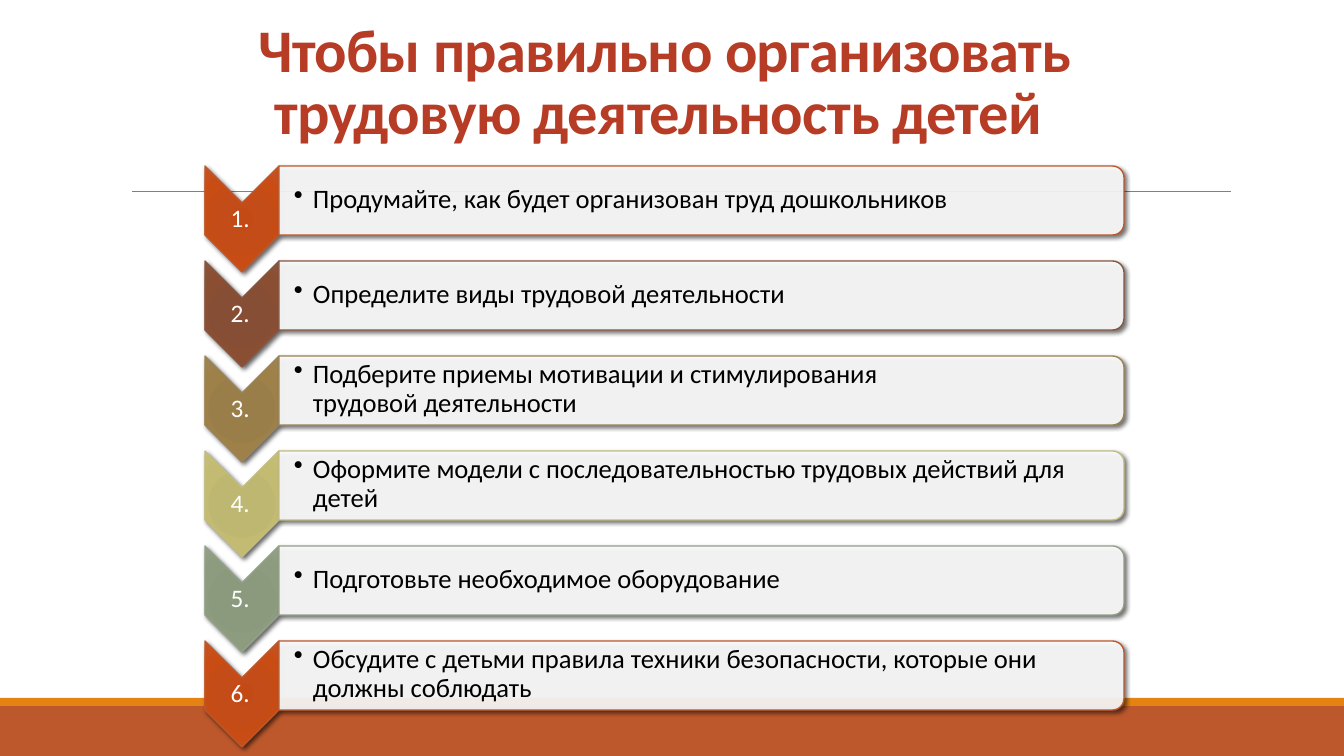
"""Build a slide with six numbered steps for organising children's work activity."""
from pptx import Presentation
from pptx import util as u
from pptx.dml.color import RGBColor
from pptx.enum import shapes, text
from pptx.oxml import parse_xml
from pptx.oxml.ns import nsdecls, qn

PX = 914400 / 100.8
THEME = {
    "font": "Calibri",
    "title": "B73C26",
    "title_size": 43.2,
    "number_size": 18,
    "step_size": 19,
    "band": "BD582C",
    "stripe": "E48312",
    "rule": "808080",
    "white": "FFFFFF",
    "black": "000000",
    "accents": [
        ("BD582C", ["C44A15", "C34C18", "C94C15", "C45525"]),
        ("865640", ["874C32", "864E34", "8A4E33", "8A553D"]),
        ("9B8357", ["9A7D48", "9A7E4A", "9E8049", "9E8454"]),
        ("C2BC80", ["BEB76E", "BEB771", "C3BB71", "C5BF7D"]),
        ("94A088", ["8A987B", "8B997D", "8D9C7E", "94A187"]),
    ],
}
STOPS = [0, 34, 70, 100]
STEP_PITCH = 95
STEPS = [
    ["Продумайте, как будет организован труд дошкольников"],
    ["Определите виды трудовой деятельности"],
    ["Подберите приемы мотивации и стимулирования", "трудовой деятельности"],
    ["Оформите модели с последовательностью трудовых действий для детей"],
    ["Подготовьте необходимое оборудование"],
    ["Обсудите с детьми правила техники безопасности, которые они должны соблюдать"],
]


def add_block(kind, left, top, width, height, fill, line=None, blur=0):
    shape = page.shapes.add_shape(kind, *[round(n * PX) for n in (left, top, width, height)])
    shape.shadow.inherit = False
    shape.fill.solid()
    shape.fill.fore_color.rgb = RGBColor.from_string(fill)
    if line is None:
        shape.line.fill.background()
        return shape
    shape.rotation = 90
    shape.line.color.rgb = RGBColor.from_string(line)
    shape.line.width = u.Pt(1)
    effects = shape._element.spPr.find(qn("a:effectLst"))
    effects.append(parse_xml(
        f'<a:outerShdw {nsdecls("a")} blurRad="{u.Pt(blur)}" dist="{u.Pt(2)}" dir="2700000" '
        f'algn="br" rotWithShape="0"><a:srgbClr val="{THEME["black"]}">'
        '<a:alpha val="60000"/></a:srgbClr></a:outerShdw>'))
    return shape


def add_label(left, top, width, height, inset, lines, size, color):
    box = page.shapes.add_textbox(*[round(n * PX) for n in (left, top, width, height)])
    frame = box.text_frame
    frame.word_wrap = True
    frame.vertical_anchor = text.MSO_ANCHOR.MIDDLE
    frame.margin_left = round(inset * PX)
    frame.margin_right = frame.margin_top = frame.margin_bottom = round(PX)
    para = frame.paragraphs[0]
    para.line_spacing = 0.9
    for index, line in enumerate(lines):
        if index:
            para.add_line_break()
        span = para.add_run()
        span.text = line
        span.font.name = THEME["font"]
        span.font.size = u.Pt(size)
        span.font.color.rgb = RGBColor.from_string(color)
    return para


deck = Presentation()
deck.slide_width = round(1344 * PX)
deck.slide_height = round(756 * PX)
page = deck.slides.add_slide(deck.slide_layouts[5])

add_block(shapes.MSO_SHAPE.RECTANGLE, 0, 706, 1344, 50, THEME["band"])
add_block(shapes.MSO_SHAPE.RECTANGLE, 0, 698, 1344, 8, THEME["stripe"])
rule = page.shapes.add_connector(
    shapes.MSO_CONNECTOR.STRAIGHT, *[round(n * PX) for n in (132, 191, 1231, 191)])
rule.line.color.rgb = RGBColor.from_string(THEME["rule"])
rule.line.width = u.Pt(0.5)
rule._element.spPr.append(parse_xml(f'<a:effectLst {nsdecls("a")}/>'))

title = page.shapes.title
title.left, title.top, title.width, title.height = [round(n * PX) for n in (191, 30, 947, 110)]
title.text_frame.word_wrap = True
title.text_frame.auto_size = text.MSO_AUTO_SIZE.NONE
title.text_frame.vertical_anchor = text.MSO_ANCHOR.MIDDLE
para = title.text_frame.paragraphs[0]
para.alignment = text.PP_ALIGN.CENTER
para.line_spacing = 0.85
span = para.add_run()
span.text = "Чтобы правильно организовать трудовую деятельность детей "
span.font.name = THEME["font"]
span.font.size = u.Pt(THEME["title_size"])
span.font.bold = True
span.font.color.rgb = RGBColor.from_string(THEME["title"])
span._r.get_or_add_rPr().set("spc", "-50")

for index, lines in enumerate(STEPS):
    offset = index * STEP_PITCH
    accent, shades = THEME["accents"][index % len(THEME["accents"])]

    chevron = add_block(shapes.MSO_SHAPE.CHEVRON, 189, 182 + offset, 106, 74,
                        shades[0], accent, 3.5)
    stops = "".join(f'<a:gs pos="{stop * 1000}"><a:srgbClr val="{shade}"/></a:gs>'
                    for stop, shade in zip(STOPS, shades))
    solid = chevron._element.spPr.find(qn("a:solidFill"))
    chevron._element.spPr.replace(solid, parse_xml(
        f'<a:gradFill {nsdecls("a")} rotWithShape="1"><a:gsLst>{stops}</a:gsLst>'
        '<a:path path="circle"><a:fillToRect l="100000" t="100000" r="100000" b="100000"/>'
        '</a:path></a:gradFill>'))
    number = add_label(206, 204 + offset, 74, 31, 1, [f"{index + 1}. "],
                       THEME["number_size"], THEME["white"])
    number.alignment = text.PP_ALIGN.CENTER

    bar = add_block(shapes.MSO_SHAPE.ROUND_2_SAME_RECTANGLE, 667, -222 + offset, 69, 845,
                    THEME["white"], accent, 3)
    bar_color = bar._element.spPr.find(qn("a:solidFill"))[0]
    bar_color.append(parse_xml(f'<a:alpha {nsdecls("a")} val="90000"/>'))
    step = add_label(279, 169 + offset, 842, 61, 15, lines,
                     THEME["step_size"], THEME["black"])
    props = step._p.get_or_add_pPr()
    props.set("marL", str(round(19 * PX)))
    props.set("indent", str(round(-19 * PX)))
    props.append(parse_xml(f'<a:buChar {nsdecls("a")} char="•"/>'))

deck.save("out.pptx")
